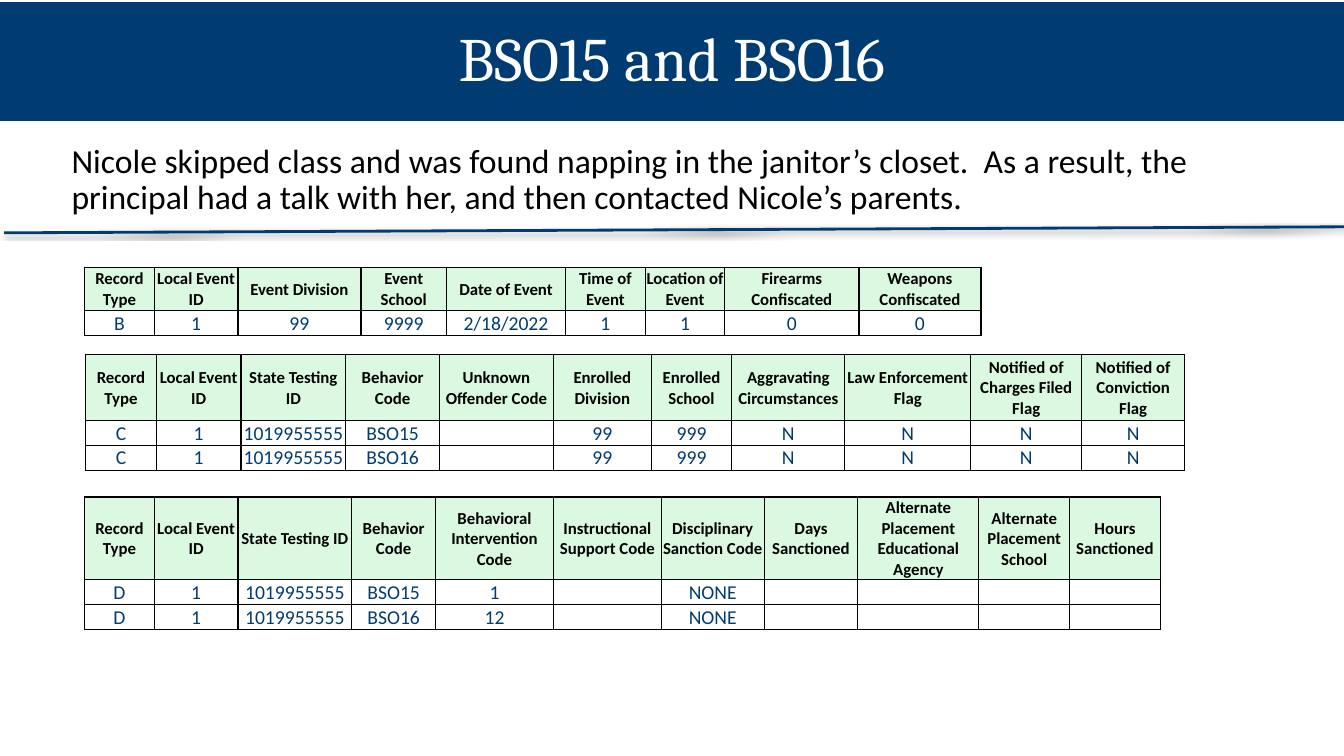
"""Build the BSO15 and BSO16 slide with its three record tables."""
from dataclasses import dataclass

import pptx
import pptx.dml.color
import pptx.enum.shapes
import pptx.enum.text
import pptx.oxml.ns
import pptx.util
from lxml import etree
from pptx.util import Inches


@dataclass(frozen=True)
class Theme:
    """Colours, fonts and type sizes of the slide."""
    navy: str = "003C71"
    mint: str = "DAF9E0"
    white: str = "FFFFFF"
    black: str = "000000"
    heading_font: str = "Cambria"
    text_font: str = "Calibri"
    title_size: int = 44
    body_size: int = 24
    header_size: int = 12
    value_size: int = 14


THEME = Theme()

EVENT_COLUMNS = [
    ("Record Type", 0.69), ("Local Event ID", 0.83), ("Event Division", 1.22),
    ("Event School", 0.85), ("Date of Event", 1.18), ("Time of Event", 0.79),
    ("Location of Event", 0.79), ("Firearms Confiscated", 1.33),
    ("Weapons Confiscated", 1.21),
]
EVENT_RECORDS = [["B", "1", "99", "9999", "2/18/2022", "1", "1", "0", "0"]]

OFFENDER_COLUMNS = [
    ("Record Type", 0.7), ("Local Event ID", 0.84), ("State Testing ID", 1.04),
    ("Behavior Code", 0.93), ("Unknown Offender Code", 1.13),
    ("Enrolled Division", 0.97), ("Enrolled School", 0.8),
    ("Aggravating Circumstances", 1.12), ("Law Enforcement Flag", 1.25),
    ("Notified of Charges Filed Flag", 1.1), ("Notified of Conviction Flag", 1.02),
]
OFFENDER_RECORDS = [
    ["C", "1", "1019955555", code, "", "99", "999", "N", "N", "N", "N"]
    for code in ("BSO15", "BSO16")
]

SANCTION_COLUMNS = [
    ("Record Type", 0.69), ("Local Event ID", 0.83), ("State Testing ID", 1.13),
    ("Behavior Code", 0.83), ("Behavioral Intervention Code", 1.17),
    ("Instructional Support Code", 1.07), ("Disciplinary Sanction Code", 1.02),
    ("Days Sanctioned", 0.93), ("Alternate Placement Educational Agency", 1.2),
    ("Alternate Placement School", 0.9), ("Hours Sanctioned", 0.9),
]
SANCTION_RECORDS = [
    ["D", "1", "1019955555", code, intervention, "", "NONE", "", "", "", ""]
    for code, intervention in (("BSO15", "1"), ("BSO16", "12"))
]


def rgb(colour):
    """Turn a hex string into a colour."""
    return pptx.dml.color.RGBColor.from_string(colour)


def add_xml(parent, tag, **attributes):
    """Append a DrawingML element to a parent."""
    return etree.SubElement(parent, pptx.oxml.ns.qn(f"a:{tag}"), attributes)


def style_paragraph(paragraph, font_name, size, colour, bold=False, centred=False):
    """Set the font and alignment of a paragraph."""
    paragraph.font.name = font_name
    paragraph.font.size = pptx.util.Pt(size)
    paragraph.font.color.rgb = rgb(colour)
    paragraph.font.bold = bold
    align = pptx.enum.text.PP_ALIGN
    paragraph.alignment = align.CENTER if centred else align.LEFT


def set_frame(frame, anchor):
    """Set wrapping, margins and anchor of a text frame."""
    frame.word_wrap = True
    frame.auto_size = pptx.enum.text.MSO_AUTO_SIZE.NONE
    frame.vertical_anchor = anchor
    frame.margin_left = frame.margin_right = Inches(0.13)
    frame.margin_top = frame.margin_bottom = Inches(0.07)


def format_title(slide, text):
    """Turn the title placeholder into the banner."""
    title = slide.shapes.title
    title.left, title.top = Inches(0), Inches(0.02)
    title.width, title.height = Inches(13.33), Inches(1.18)
    title.fill.solid()
    title.fill.fore_color.rgb = rgb(THEME.navy)
    set_frame(title.text_frame, pptx.enum.text.MSO_ANCHOR.MIDDLE)
    title.text_frame.text = text
    heading = title.text_frame.paragraphs[0]
    heading.line_spacing = 0.9
    style_paragraph(heading, THEME.heading_font, THEME.title_size, THEME.white, centred=True)


def add_scenario(slide, text):
    """Add the paragraph that tells the scenario."""
    scenario = slide.shapes.add_textbox(Inches(0.58), Inches(1.36), Inches(12), Inches(6.14))
    set_frame(scenario.text_frame, pptx.enum.text.MSO_ANCHOR.TOP)
    scenario.text_frame.text = text
    story = scenario.text_frame.paragraphs[0]
    story.line_spacing = 0.9
    style_paragraph(story, THEME.text_font, THEME.body_size, THEME.black)


def add_divider(slide):
    """Add the slanted rule with its soft shadow."""
    divider = slide.shapes.add_connector(
        pptx.enum.shapes.MSO_CONNECTOR.STRAIGHT,
        Inches(0.04), Inches(2.31), Inches(13.33), Inches(2.25))
    divider.line.color.rgb = rgb(THEME.navy)
    divider.line.width = pptx.util.Pt(2)
    effects = add_xml(divider.element.spPr, "effectLst")
    shadow = add_xml(effects, "outerShdw", blurRad=str(pptx.util.Pt(3.1)),
                     dist=str(pptx.util.Pt(1.6)), dir="5400000", rotWithShape="0")
    add_xml(add_xml(shadow, "srgbClr", val=THEME.black), "alpha", val="38000")


def add_borders(cell):
    """Draw thin black lines on all four sides of a cell."""
    properties = cell._tc.get_or_add_tcPr()
    for side in ("lnL", "lnR", "lnT", "lnB"):
        border = add_xml(properties, side, w=str(pptx.util.Pt(1)))
        add_xml(add_xml(border, "solidFill"), "srgbClr", val=THEME.black)


def fill_cell(cell, text, is_header):
    """Write and format one header or value cell."""
    cell.text = text
    cell.vertical_anchor = pptx.enum.text.MSO_ANCHOR.MIDDLE
    cell.margin_left = cell.margin_right = cell.margin_top = Inches(0.01)
    cell.margin_bottom = Inches(0)
    add_borders(cell)
    if is_header:
        cell.fill.solid()
        cell.fill.fore_color.rgb = rgb(THEME.mint)
    else:
        cell.fill.background()
    style_paragraph(
        cell.text_frame.paragraphs[0], THEME.text_font,
        THEME.header_size if is_header else THEME.value_size,
        THEME.black if is_header else THEME.navy,
        bold=is_header, centred=True)


def add_record_table(slide, left, top, header_height, columns, records):
    """Add a table of records under a shaded header row."""
    value_height = 0.24
    rows = [[label for label, _ in columns], *records]
    heights = [header_height] + [value_height] * len(records)
    table = slide.shapes.add_table(
        len(rows), len(columns), Inches(left), Inches(top),
        Inches(sum(width for _, width in columns)), Inches(sum(heights))).table
    table.first_row = table.horz_banding = False
    for column, (_, width) in zip(table.columns, columns):
        column.width = Inches(width)
    for row_index, (row, height) in enumerate(zip(rows, heights)):
        table.rows[row_index].height = Inches(height)
        for column_index, text in enumerate(row):
            fill_cell(table.cell(row_index, column_index), text, row_index == 0)


def main():
    """Build the slide and save it."""
    deck = pptx.Presentation()
    deck.slide_width, deck.slide_height = Inches(13.33), Inches(7.5)
    slide = deck.slides.add_slide(deck.slide_layouts.get_by_name("Title Only"))
    format_title(slide, "BSO15 and BSO16")
    add_scenario(slide, "Nicole skipped class and was found napping in the janitor’s closet.  "
                        "As a result, the principal had a talk with her, "
                        "and then contacted Nicole’s parents.")
    add_divider(slide)
    add_record_table(slide, 0.84, 2.65, 0.43, EVENT_COLUMNS, EVENT_RECORDS)
    add_record_table(slide, 0.85, 3.52, 0.65, OFFENDER_COLUMNS, OFFENDER_RECORDS)
    add_record_table(slide, 0.84, 4.93, 0.82, SANCTION_COLUMNS, SANCTION_RECORDS)
    deck.save("out.pptx")


if __name__ == "__main__":
    main()
